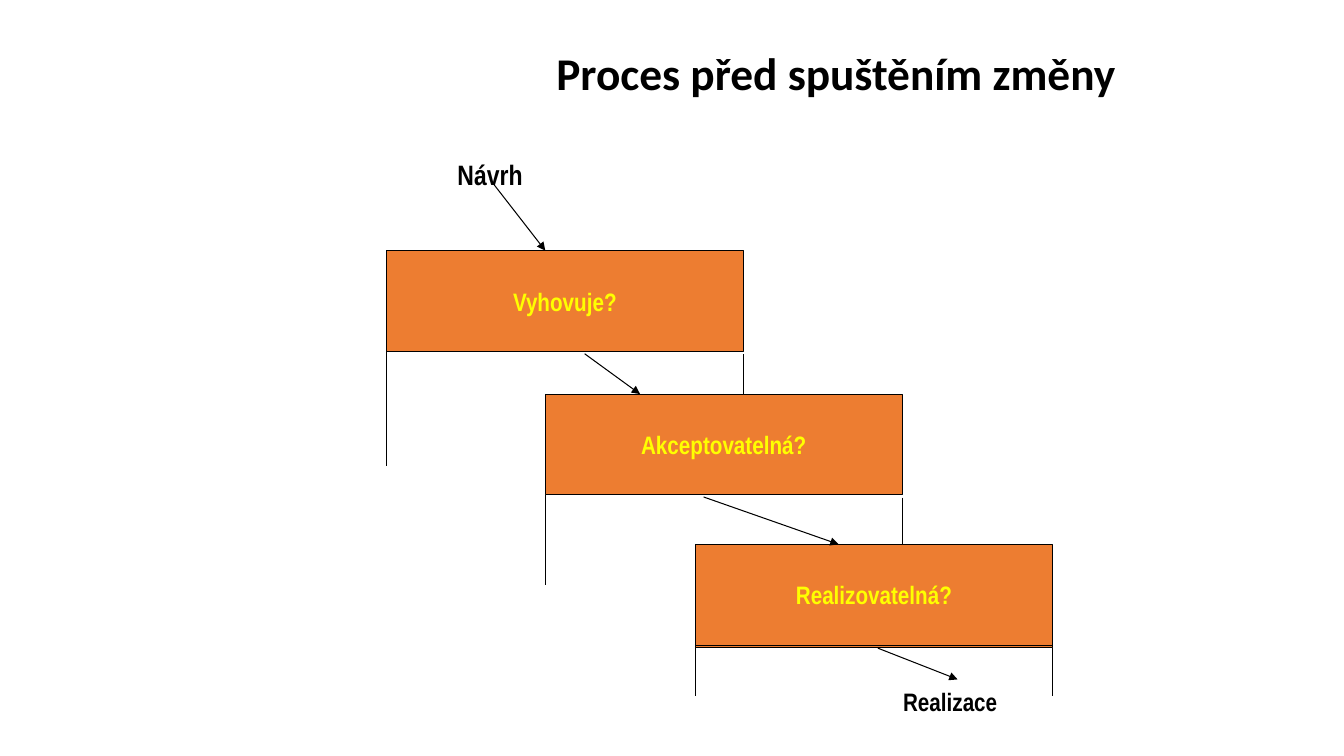
from lxml import etree
from pptx import Presentation
from pptx.dml.color import RGBColor
from pptx.enum.shapes import MSO_CONNECTOR, MSO_SHAPE
from pptx.enum.text import MSO_ANCHOR, MSO_AUTO_SIZE, PP_ALIGN
from pptx.oxml.ns import qn
from pptx.util import Pt

RECT = MSO_SHAPE.RECTANGLE
STRAIGHT = MSO_CONNECTOR.STRAIGHT
MIDDLE = MSO_ANCHOR.MIDDLE
NO_FIT = MSO_AUTO_SIZE.NONE
FIT_SHAPE = MSO_AUTO_SIZE.SHAPE_TO_FIT_TEXT
CENTER, LEFT, RIGHT = PP_ALIGN.CENTER, PP_ALIGN.LEFT, PP_ALIGN.RIGHT

ORANGE = RGBColor(0xED, 0x7D, 0x31)
YELLOW = RGBColor(0xFF, 0xFF, 0x00)
BLACK = RGBColor(0x00, 0x00, 0x00)

TITLE = "Proces před spuštěním změny"
BOX_W, BOX_H = 255, 72
SHADE_DROP = 2
STEPS = [
    ("Vyhovuje?", 276, 179),
    ("Akceptovatelná?", 389.5, 281.5),
    ("Realizovatelná?", 496.8, 388.8),
]
LEFT_RAIL_ENDS = [332.6, 417.6, 496.8]
RIGHT_RAIL_ENDS = [281.5, 394.6, 496.8]
ARROWS = [
    (350, 128.2, 389.5, 179),
    (417.6, 252.7, 457.2, 281.5),
    (502.6, 355, 599, 388.8),
    (627.1, 463, 684, 485.3),
]
LABELS = [
    ("Návrh", 20, 319.7, 108.7, 61.2, 31),
    ("Realizace", 18, 638, 486.7, 82, 28.8),
]


def style_text(tf, text, size, color, align, font):
    tf.text = text
    p = tf.paragraphs[0]
    p.alignment = align
    p.font.size = Pt(size)
    p.font.name = font
    p.font.bold = True
    p.font.color.rgb = color
    return p


def add_box(slide, x, y):
    sp = slide.shapes.add_shape(RECT, Pt(x), Pt(y), Pt(BOX_W), Pt(BOX_H))
    sp.shadow.inherit = False
    sp.fill.solid()
    sp.fill.fore_color.rgb = ORANGE
    sp.line.color.rgb = BLACK
    sp.line.width = Pt(0.75)
    return sp


def add_line(slide, x1, y1, x2, y2, arrow=False):
    line = slide.shapes.add_connector(STRAIGHT, Pt(x1), Pt(y1), Pt(x2), Pt(y2))
    line.line.color.rgb = BLACK
    line.line.width = Pt(0.75)
    if arrow:
        etree.SubElement(line.line._get_or_add_ln(), qn("a:tailEnd"), type="triangle")
    etree.SubElement(line._element.spPr, qn("a:effectLst"))


def main():
    prs = Presentation()
    prs.slide_width, prs.slide_height = Pt(960), Pt(540)
    slide = prs.slides.add_slide(prs.slide_layouts[5])

    title = slide.shapes.title
    title.left, title.top, title.width, title.height = Pt(156.2), Pt(20), Pt(648), Pt(68.4)
    tf = title.text_frame
    p = style_text(tf, TITLE, 32.4, BLACK, RIGHT, "Calibri")
    p.line_spacing = 0.9
    tf.vertical_anchor = MIDDLE
    tf.auto_size = NO_FIT

    for (_, x, y), left_end, right_end in zip(STEPS, LEFT_RAIL_ENDS, RIGHT_RAIL_ENDS):
        bottom = y + BOX_H
        add_line(slide, x, bottom, x, left_end)
        add_line(slide, x + BOX_W, bottom + SHADE_DROP, x + BOX_W, right_end)

    _, last_x, last_y = STEPS[-1]
    add_box(slide, last_x, last_y + SHADE_DROP)
    for text, x, y in STEPS:
        tf = add_box(slide, x, y).text_frame
        tf.word_wrap = False
        tf.vertical_anchor = MIDDLE
        style_text(tf, text, 18, YELLOW, CENTER, "Arial Narrow")

    for ends in ARROWS:
        add_line(slide, *ends, arrow=True)

    for text, size, x, y, w, h in LABELS:
        tf = slide.shapes.add_textbox(Pt(x), Pt(y), Pt(w), Pt(h)).text_frame
        tf.word_wrap = False
        tf.auto_size = FIT_SHAPE
        style_text(tf, text, size, BLACK, LEFT, "Arial Narrow")

    prs.save("out.pptx")


if __name__ == "__main__":
    main()
